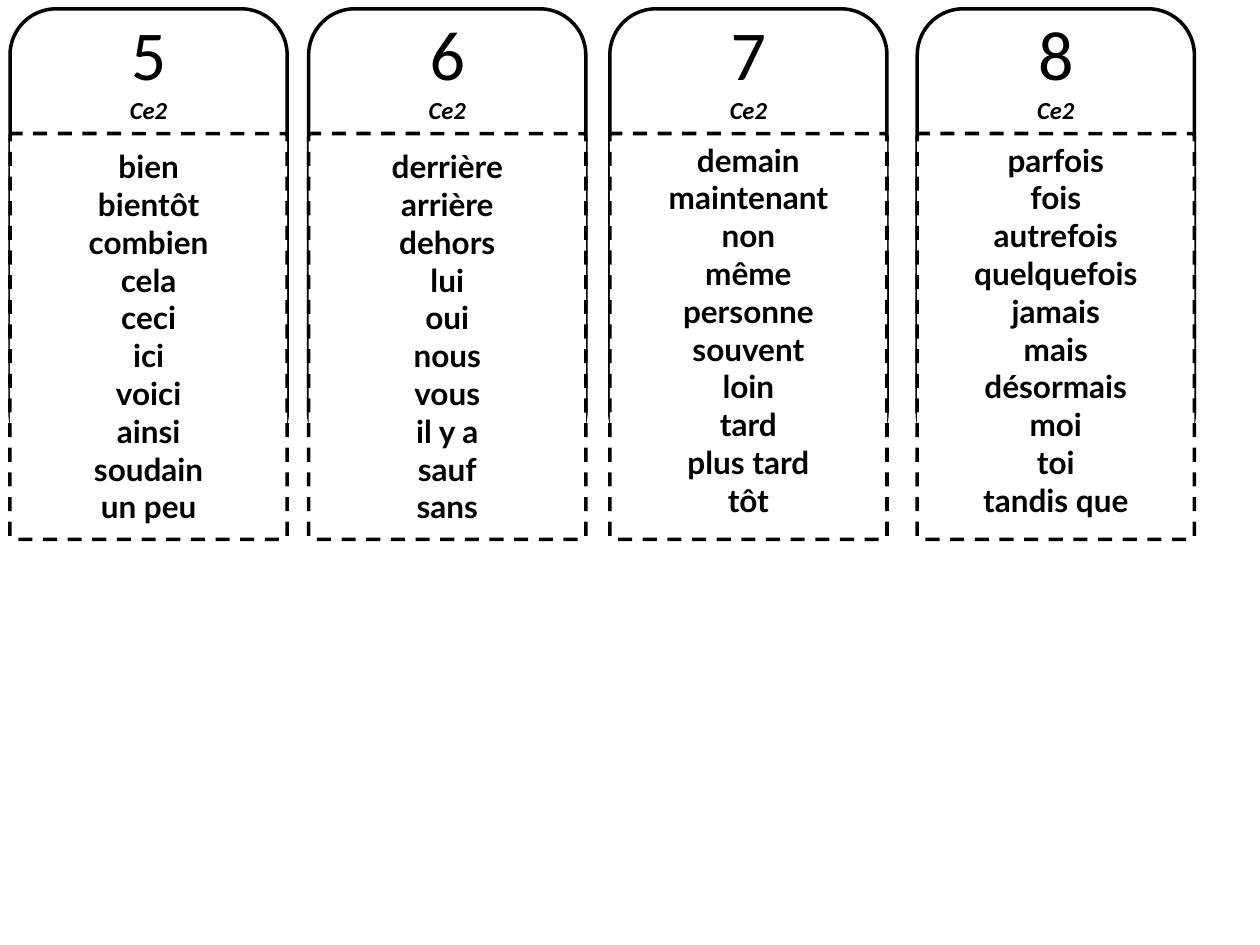
from pptx import Presentation
from pptx import util as u
from pptx.dml.color import RGBColor
from pptx.enum import dml, shapes, text

BLACK = RGBColor(0, 0, 0)
WHITE = RGBColor(255, 255, 255)

# Card grid, in inches
CARD_WIDTH = 2.2
HEADER_TOP, HEADER_HEIGHT = 0.07, 3.57
LIST_TOP, LIST_HEIGHT = 1.06, 3.22
WORDS_TOP, WORDS_HEIGHT, WORDS_WIDTH = 1.12, 3.13, 1.6

# Number, left edge, words, whether the words sit in their own text box
CARDS = [
    ("5", 0.08, ["bien", "bientôt", "combien", "cela", "ceci", "ici",
                 "voici", "ainsi", "soudain", "un peu"], True),
    ("6", 2.45, ["derrière", "arrière", "dehors", "lui", "oui", "nous",
                 "vous", "il y a", "sauf", "sans"], True),
    ("7", 4.84, ["demain", "maintenant", "non", "même", "personne", "souvent",
                 "loin", "tard", "plus tard", "tôt"], False),
    ("8", 7.28, ["parfois", "fois", "autrefois", "quelquefois", "jamais", "mais",
                 "désormais", "moi", "toi", "tandis que"], False),
]

presentation = Presentation()
presentation.slide_width, presentation.slide_height = u.Inches(10), u.Inches(7.5)
slide = presentation.slides.add_slide(presentation.slide_layouts[6])


def add_panel(left, top, height):
    """Add a rounded panel with a black outline."""
    shape = slide.shapes.add_shape(
        shapes.MSO_SHAPE.ROUNDED_RECTANGLE, u.Inches(left), u.Inches(top),
        u.Inches(CARD_WIDTH), u.Inches(height))
    shape.shadow.inherit = False
    shape.line.color.rgb = BLACK
    shape.line.width = u.Pt(2)
    return shape


def write_lines(frame, lines, font_name):
    """Write centred lines given as (wording, size, bold, italic)."""
    frame.word_wrap = True
    for index, (wording, size, bold, italic) in enumerate(lines):
        paragraph = frame.paragraphs[0] if index == 0 else frame.add_paragraph()
        paragraph.alignment = text.PP_ALIGN.CENTER
        run = paragraph.add_run()
        run.text = wording
        run.font.name, run.font.size = font_name, u.Pt(size)
        run.font.bold, run.font.italic = bold, italic
        run.font.color.rgb = BLACK


for number, left, words, own_box in CARDS:
    # Header with number and school level
    header = add_panel(left, HEADER_TOP, HEADER_HEIGHT)
    header.fill.background()
    frame = header.text_frame
    frame.vertical_anchor = text.MSO_ANCHOR.MIDDLE
    frame.margin_top, frame.margin_bottom = 0, u.Inches(2.64)
    write_lines(frame, [(number, 40, False, False), ("Ce2", 14, True, True)], "Calibri")

    # Dashed word panel
    panel = add_panel(left, LIST_TOP, LIST_HEIGHT)
    panel.adjustments[0] = 0.01
    panel.fill.solid()
    panel.fill.fore_color.rgb = WHITE
    panel.line.dash_style = dml.MSO_LINE.DASH

    # Word list
    holder = panel
    if own_box:
        holder = slide.shapes.add_textbox(
            u.Inches(left + (CARD_WIDTH - WORDS_WIDTH) / 2), u.Inches(WORDS_TOP),
            u.Inches(WORDS_WIDTH), u.Inches(WORDS_HEIGHT))
    holder.text_frame.vertical_anchor = text.MSO_ANCHOR.TOP
    write_lines(holder.text_frame, [(word, 18, True, False) for word in words], "Lato")

presentation.save("out.pptx")
